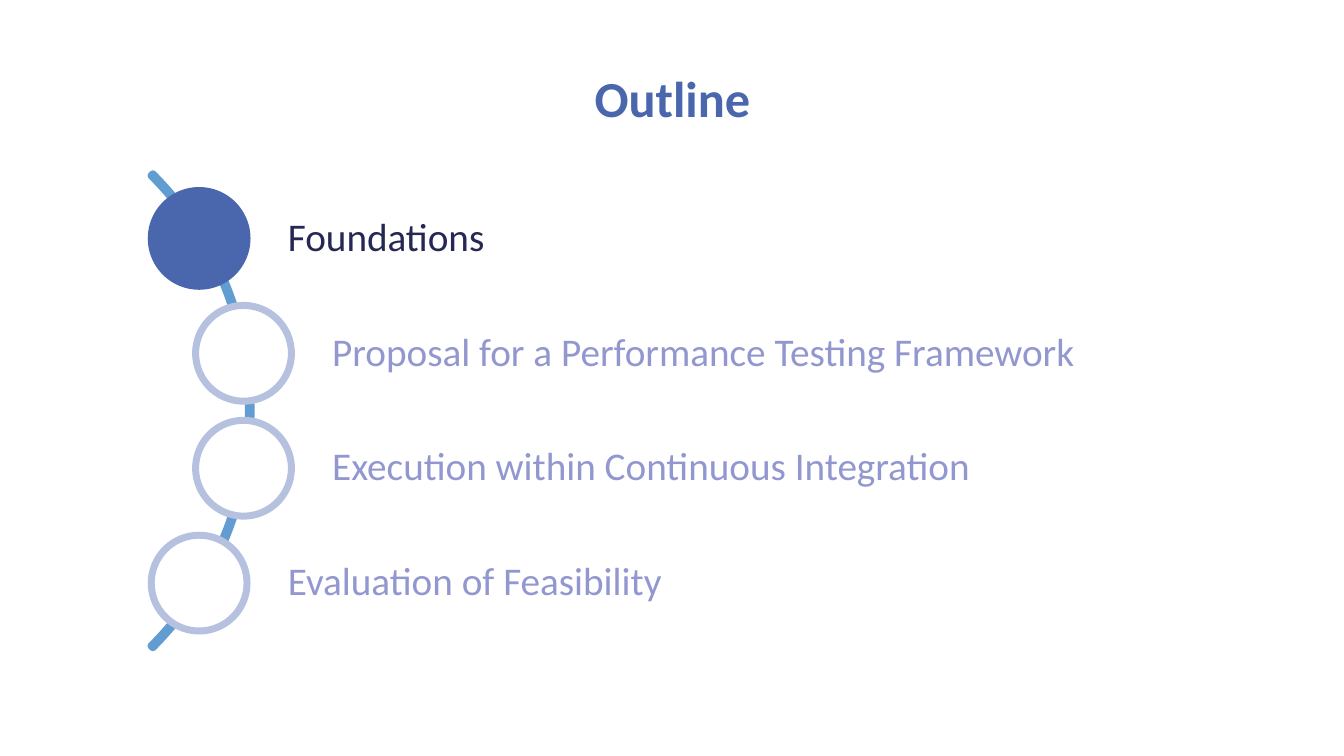
from dataclasses import dataclass

import pptx
import pptx.dml.color
import pptx.enum.shapes
import pptx.enum.text
import pptx.util
from pptx.enum.shapes import MSO_SHAPE
from pptx.enum.text import MSO_ANCHOR, PP_ALIGN

COLOURS = {
    "accent": "4A66AC",
    "arc": "629DD1",
    "dark": "242852",
    "muted_text": "9297CF",
    "muted_ring": "B5C1DF",
    "white": "FFFFFF",
}
FONT = "Calibri"

# Grid in inches: one row per chapter, one column per step of indent.
ROW = 1.14
COLUMN = 0.44
FIRST_COLUMN = 1.975
MIDDLE = 4.075
DOT = ROW * 5 / 6
LABEL_HEIGHT = ROW * 2 / 3
LABEL_OFFSET = 0.28
LABEL_RIGHT = 12.13
ARC_SIZE = 6.65
ARC_LEFT = -4.16


@dataclass(frozen=True)
class Box:
    left: float
    top: float
    width: float
    height: float

    def emu(self) -> list[int]:
        return [pptx.util.Inches(v) for v in (self.left, self.top, self.width, self.height)]


@dataclass(frozen=True)
class Chapter:
    title: str
    indent: int
    current: bool = False


CHAPTERS = [
    Chapter("Foundations", 0, current=True),
    Chapter("Proposal for a Performance Testing Framework", 1),
    Chapter("Execution within Continuous Integration", 1),
    Chapter("Evaluation of Feasibility", 0),
]


def rgb(name: str) -> pptx.dml.color.RGBColor:
    return pptx.dml.color.RGBColor.from_string(COLOURS[name])


def set_line(shape, colour: str, width: float) -> None:
    shape.line.color.rgb = rgb(colour)
    shape.line.width = pptx.util.Pt(width)


def add_text(slide, text: str, box: Box, *, size: float, colour: str, bold: bool = False,
             align=PP_ALIGN.LEFT, anchor=MSO_ANCHOR.MIDDLE,
             insets: tuple = (0.1, 0.05, 0.1, 0.05)):
    """Add a wrapped text box; insets run left, top, right, bottom in inches."""
    text_box = slide.shapes.add_textbox(*box.emu())
    frame = text_box.text_frame
    frame.word_wrap = True
    frame.vertical_anchor = anchor
    (frame.margin_left, frame.margin_top,
     frame.margin_right, frame.margin_bottom) = map(pptx.util.Inches, insets)
    paragraph = frame.paragraphs[0]
    paragraph.alignment = align
    paragraph.line_spacing = 0.9
    run = paragraph.add_run()
    run.text = text
    run.font.name = FONT
    run.font.size = pptx.util.Pt(size)
    run.font.bold = bold
    run.font.color.rgb = rgb(colour)
    return text_box


def add_arc(slide) -> None:
    """Add the quarter circle that links the chapter dots."""
    box = Box(ARC_LEFT, MIDDLE - ARC_SIZE / 2, ARC_SIZE, ARC_SIZE)
    arc = slide.shapes.add_shape(MSO_SHAPE.BLOCK_ARC, *box.emu())
    arc.shadow.inherit = False
    # Start angle, end angle and a hairline thickness.
    for index, value in enumerate((189, 27, 0.4 / 100)):
        arc.adjustments[index] = value
    arc.fill.background()
    set_line(arc, "arc", 5)


def add_chapter(slide, chapter: Chapter, row: int) -> None:
    centre_x = FIRST_COLUMN + chapter.indent * COLUMN
    centre_y = MIDDLE + (row - (len(CHAPTERS) - 1) / 2) * ROW

    label_left = centre_x + LABEL_OFFSET
    label = add_text(
        slide, chapter.title,
        Box(label_left, centre_y - LABEL_HEIGHT / 2, LABEL_RIGHT - label_left, LABEL_HEIGHT),
        size=28, colour="dark" if chapter.current else "muted_text",
        insets=(0.6, 0.08, 0.08, 0.08))
    set_line(label, "white", 1)

    dot_box = Box(centre_x - DOT / 2, centre_y - DOT / 2, DOT, DOT)
    dot = slide.shapes.add_shape(MSO_SHAPE.OVAL, *dot_box.emu())
    dot.shadow.inherit = False
    dot.fill.solid()
    dot.fill.fore_color.rgb = rgb("accent" if chapter.current else "white")
    set_line(dot, "accent" if chapter.current else "muted_ring", 5)


def main() -> None:
    deck = pptx.Presentation()
    deck.slide_width = pptx.util.Inches(13.33)
    deck.slide_height = pptx.util.Inches(7.5)
    slide = deck.slides.add_slide(deck.slide_layouts[6])

    add_text(slide, "Outline", Box(1.42, 0.43, 10.5, 0.89), size=36, colour="accent",
             bold=True, align=PP_ALIGN.CENTER, anchor=MSO_ANCHOR.BOTTOM)
    add_arc(slide)
    for row, chapter in enumerate(CHAPTERS):
        add_chapter(slide, chapter, row)

    deck.save("out.pptx")


if __name__ == "__main__":
    main()
